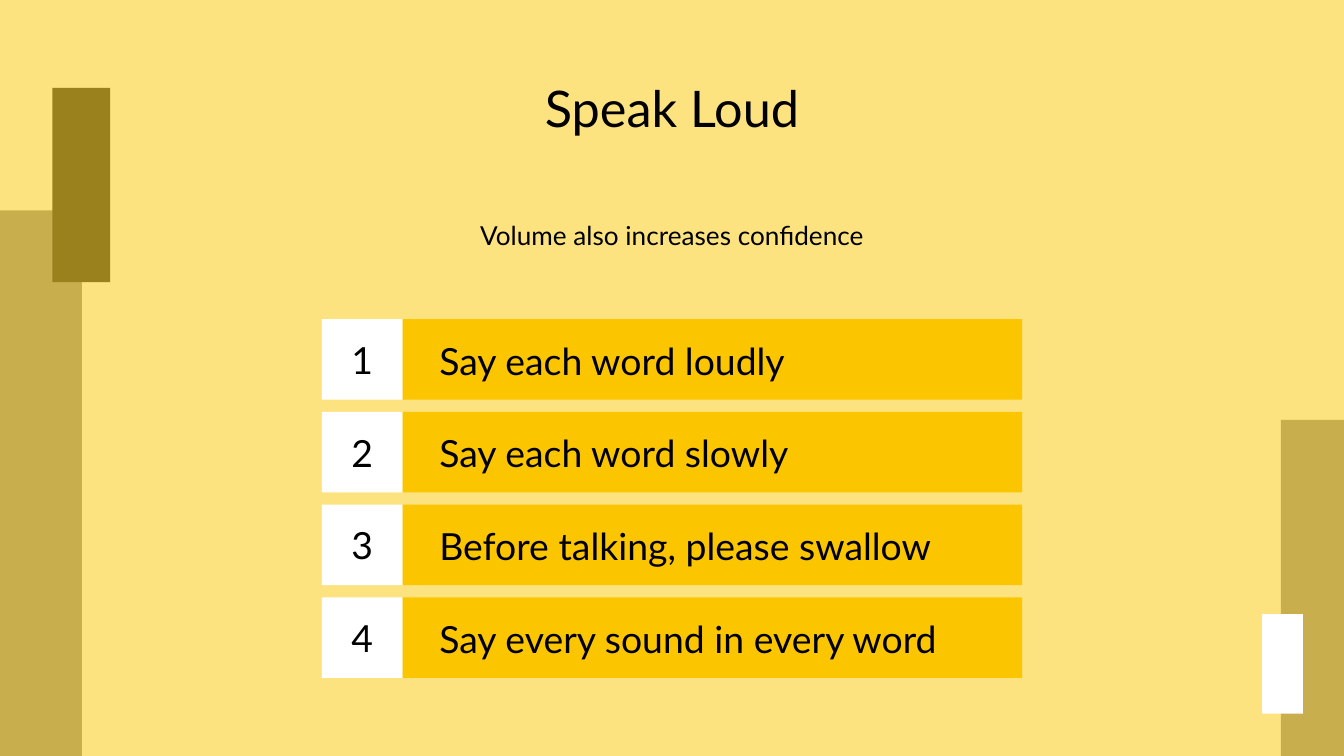
from dataclasses import dataclass

from pptx import Presentation
from pptx.dml.color import RGBColor as Color
from pptx.enum.shapes import MSO_SHAPE as Shape
from pptx.enum.text import MSO_ANCHOR as Anchor, MSO_AUTO_SIZE as AutoSize, PP_ALIGN as Align
from pptx.util import Emu, Pt

SCALE = 4572
TITLE_ONLY = 5
PAGE_WIDTH, PAGE_HEIGHT = 2000, 1125


@dataclass(frozen=True)
class Theme:
    font: str = "Lato"
    text: str = "000000"
    background: str = "FDE380"
    column: str = "C8AE4D"
    accent: str = "9B811D"
    bar: str = "FBC600"
    tile: str = "FFFFFF"
    title_size: int = 27
    item_size: int = 20
    subtitle_size: int = 14


@dataclass(frozen=True)
class Box:
    left: int
    top: int
    width: int
    height: int

    def inner(self, left, top, width, height):
        return Box(self.left + left, self.top + top, width, height)

    def emu(self):
        return [Emu(side * SCALE) for side in (self.left, self.top, self.width, self.height)]


THEME = Theme()
TIPS = [
    "Say each word loudly",
    "Say each word slowly",
    "Before talking, please swallow",
    "Say every sound in every word",
]


def set_values(target, values):
    for name, value in values.items():
        setattr(target, name, value)


def add_block(page, box, color):
    block = page.shapes.add_shape(Shape.RECTANGLE, *box.emu())
    block.shadow.inherit = False
    block.fill.solid()
    block.fill.fore_color.rgb = Color.from_string(color)
    block.line.fill.background()


def write_text(holder, text, size, align):
    frame = holder.text_frame
    inset = Emu(20 * SCALE)
    set_values(frame, {
        "word_wrap": True,
        "auto_size": AutoSize.NONE,
        "vertical_anchor": Anchor.MIDDLE,
        "margin_left": inset,
        "margin_top": inset,
        "margin_right": inset,
        "margin_bottom": inset,
    })
    para = frame.paragraphs[0]
    para.alignment = align
    span = para.add_run()
    span.text = text
    set_values(span.font, {"name": THEME.font, "size": Pt(size), "bold": False})
    span.font.color.rgb = Color.from_string(THEME.text)


def add_text(page, box, text, size, align=Align.CENTER):
    write_text(page.shapes.add_textbox(*box.emu()), text, size, align)


def add_left_decoration(page, box):
    add_block(page, box.inner(0, 182, 122, box.height - 182), THEME.column)
    add_block(page, box.inner(78, 0, 86, 289), THEME.accent)


def add_right_decoration(page, box):
    add_block(page, box.inner(28, 0, 94, box.height), THEME.column)
    add_block(page, box.inner(0, 289, 61, 148), THEME.tile)


def add_heading(page, box, title, subtitle):
    holder = page.shapes.title
    area = box.inner(0, 0, box.width, 84)
    set_values(holder, dict(zip(("left", "top", "width", "height"), area.emu())))
    write_text(holder, title, THEME.title_size, Align.CENTER)
    add_text(page, box.inner(362, 143, 964, 178), subtitle, THEME.subtitle_size)


def add_tip(page, box, number, tip):
    side = box.height
    add_block(page, box.inner(side, 0, box.width - side, side), THEME.bar)
    add_block(page, box.inner(0, 0, side, side), THEME.tile)
    add_text(page, box.inner(23, 11, 74, 98), str(number), THEME.item_size)
    add_text(page, box.inner(155, 9, 876, 104), tip, THEME.item_size, Align.LEFT)


def add_tips(page, box, tips):
    height, gap = 120, 18
    for index, tip in enumerate(tips):
        row = box.inner(0, index * (height + gap), box.width, height)
        add_tip(page, row, index + 1, tip)


def main():
    deck = Presentation()
    deck.slide_width = Emu(PAGE_WIDTH * SCALE)
    deck.slide_height = Emu(PAGE_HEIGHT * SCALE)
    page = deck.slides.add_slide(deck.slide_layouts[TITLE_ONLY])
    page.background.fill.solid()
    page.background.fill.fore_color.rgb = Color.from_string(THEME.background)

    add_left_decoration(page, Box(0, 131, 164, PAGE_HEIGHT - 131))
    add_right_decoration(page, Box(1878, 625, 122, PAGE_HEIGHT - 625))
    add_heading(page, Box(156, 118, 1688, 321), "Speak Loud", "Volume also increases confidence")
    add_tips(page, Box(479, 475, 1042, 534), TIPS)
    deck.save("out.pptx")


if __name__ == "__main__":
    main()
